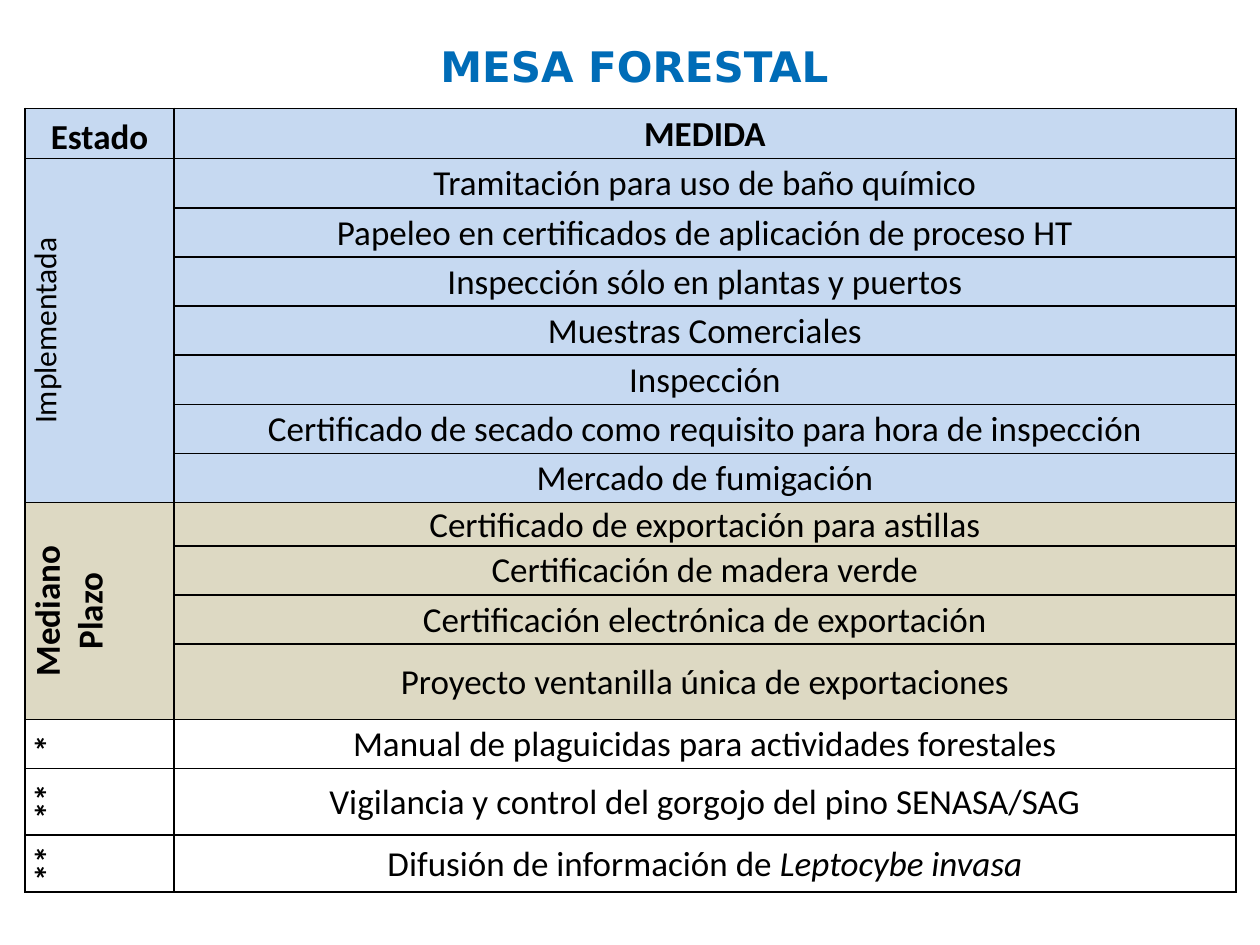
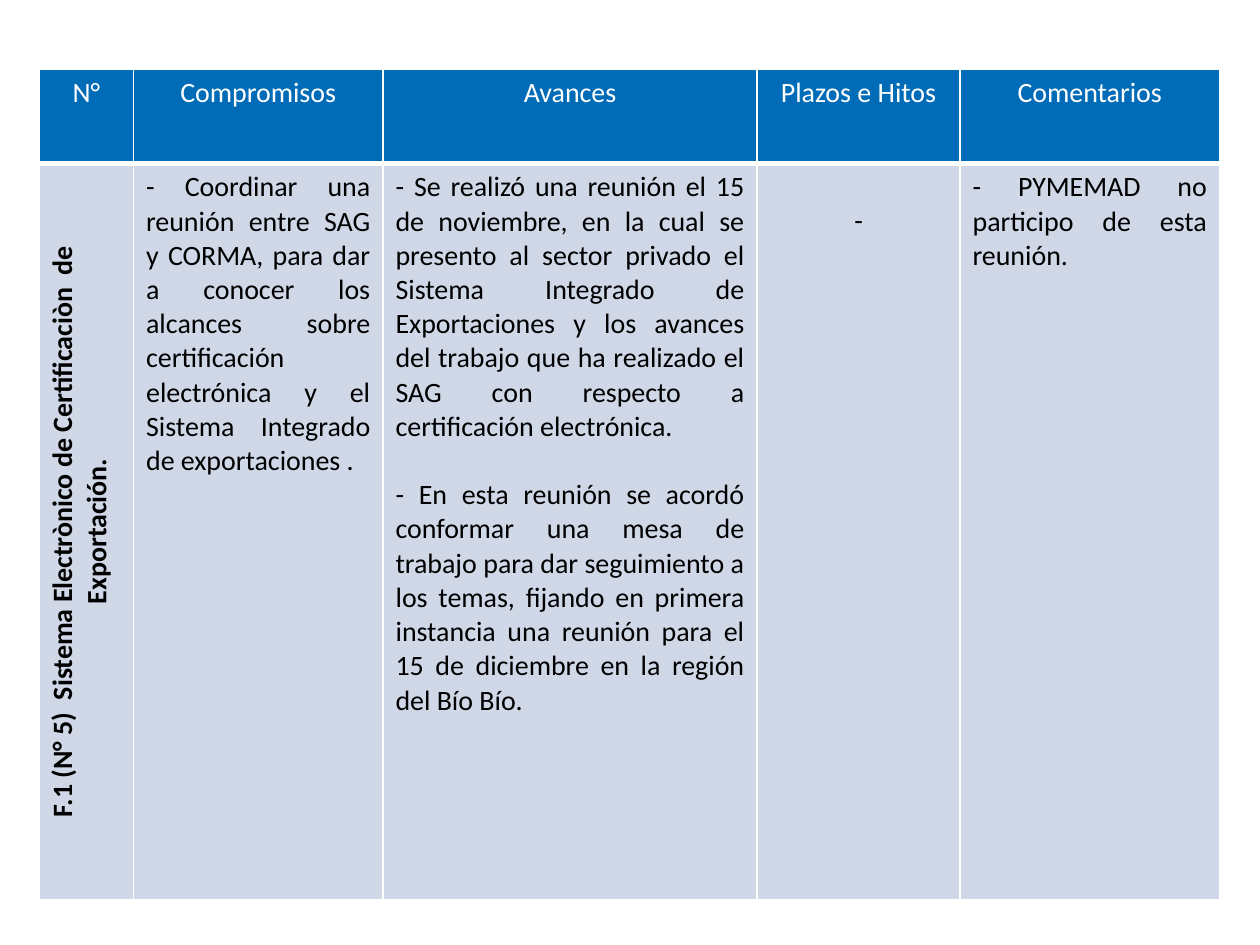
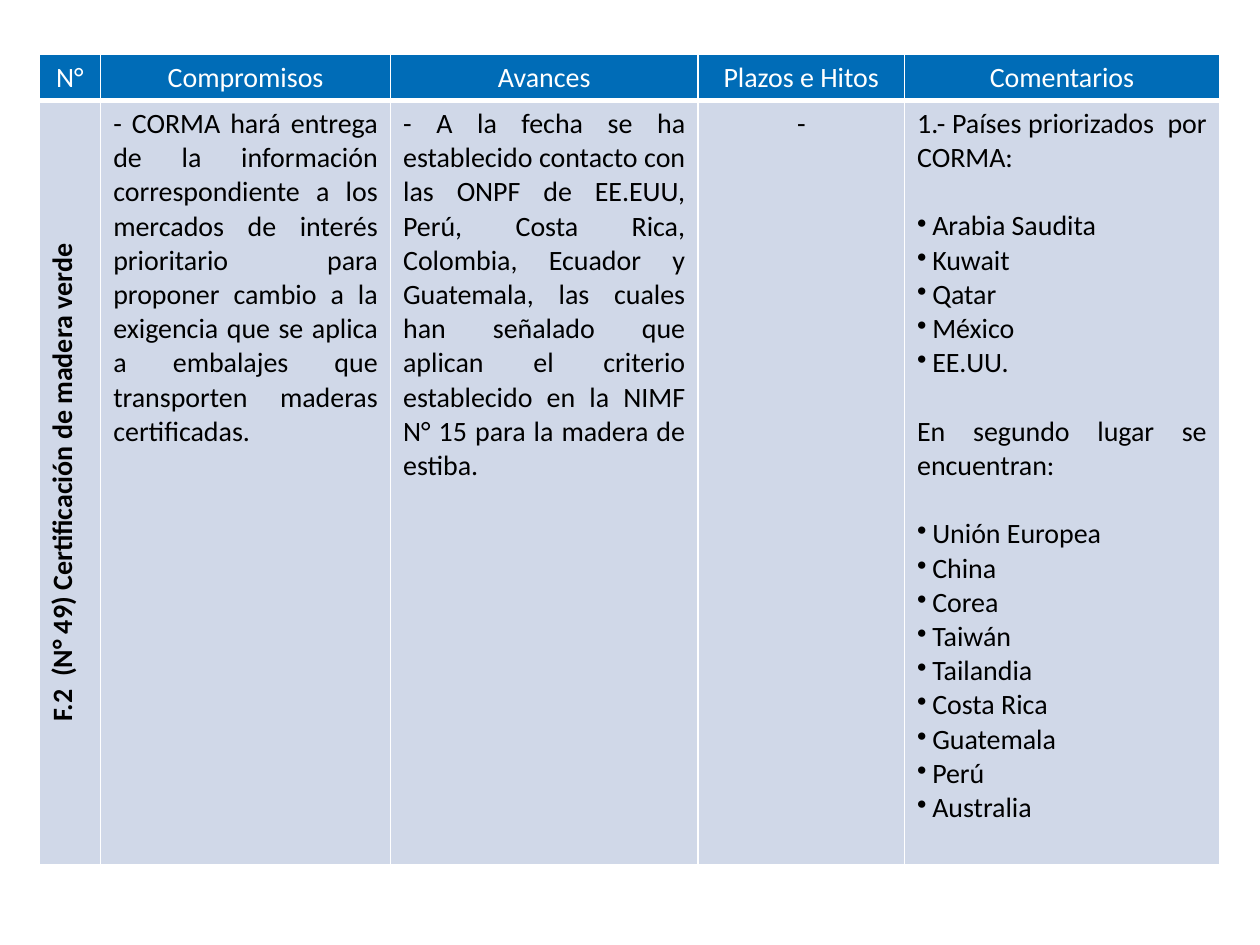
from lxml.etree import SubElement
from pptx import Presentation
from pptx.dml.color import RGBColor
from pptx.enum.text import MSO_ANCHOR, PP_ALIGN
from pptx.oxml.ns import qn
from pptx.util import Inches, Pt

BLUE, BLACK, WHITE = "006CB7", "000000", "FFFFFF"
DONE, MEDIUM, BODY = "C6D9F1", "DDD9C3", "D0D8E8"
LINE = 19.5  # one line of 16 pt text, in points
CENTER, LEFT, JUSTIFY = PP_ALIGN.CENTER, PP_ALIGN.LEFT, PP_ALIGN.JUSTIFY

# Status, bold status, fill, measures with their row heights
GROUPS = [
    ("Implementada", False, DONE, [
        ("Tramitación para uso de baño químico", 0.39),
        ("Papeleo en certificados de aplicación de proceso HT", 0.39),
        ("Inspección sólo en plantas y puertos", 0.39),
        ("Muestras Comerciales", 0.39),
        ("Inspección", 0.39),
        ("Certificado de secado como requisito para hora de inspección", 0.39),
        ("Mercado de fumigación", 0.39)]),
    ("Mediano Plazo", True, MEDIUM, [
        ("Certificado de exportación para astillas", 0.31),
        ("Certificación de madera verde", 0.39),
        ("Certificación electrónica de exportación", 0.39),
        ("Proyecto ventanilla única de exportaciones", 0.39)]),
    ("*", True, WHITE, [
        ("Manual de plaguicidas para actividades forestales", 0.39)]),
    ("**", True, WHITE, [
        ("Vigilancia y control del gorgojo del pino SENASA/SAG", 0.53)]),
    ("**", True, WHITE, [
        ("Difusión de información de |Leptocybe invasa", 0.45)]),
]

HEADERS = ["N°", "Compromisos", "Avances", "Plazos e Hitos", "Comentarios"]
# Each body cell is a list of paragraphs; a nested list is a bulleted list
COMMITMENTS = [
    {"top": 0.55, "cols": [0.75, 1.98, 2.97, 1.61, 2.06], "rows": [0.75, 4.84],
     "deadline_top": 0.32,
     "topic": "F.1 (N° 5)  Sistema Electrònico de Certificaciòn  de Exportación.",
     "commitment": ["- Coordinar una reunión entre SAG y CORMA, para dar a conocer los "
                    "alcances sobre certificación electrónica y el Sistema Integrado de "
                    "exportaciones ."],
     "progress": ["- Se realizó una reunión el 15 de noviembre, en la cual se presento al "
                  "sector privado el Sistema Integrado de Exportaciones y los avances del "
                  "trabajo que ha realizado el SAG con respecto a certificación electrónica.",
                  "- En esta reunión se acordó conformar una mesa de trabajo para dar "
                  "seguimiento a los temas, fijando en primera instancia una reunión para "
                  "el 15 de diciembre en la región del Bío Bío."],
     "comments": ["- PYMEMAD no participo de esta reunión."]},
    {"top": 0.43, "cols": [0.49, 2.3, 2.44, 1.64, 2.5], "rows": [0.34, 6.07],
     "deadline_top": 0.05,
     "topic": "F.2  (N° 49) Certificación de madera verde",
     "commitment": ["- CORMA hará entrega de la información correspondiente a los mercados "
                    "de interés prioritario para proponer cambio a la exigencia que se "
                    "aplica a embalajes que transporten maderas certificadas."],
     "progress": ["- A la fecha se ha establecido contacto con las ONPF de EE.EUU, Perú, "
                  "Costa Rica, Colombia, Ecuador y Guatemala, las cuales han señalado que "
                  "aplican el criterio establecido en la NIMF N° 15 para la madera de estiba."],
     "comments": ["1.- Países priorizados  por CORMA:",
                  ["Arabia Saudita", "Kuwait", "Qatar", "México", "EE.UU."],
                  "En segundo lugar se encuentran:",
                  ["Unión Europea", "China", "Corea", "Taiwán", "Tailandia", "Costa Rica",
                   "Guatemala", "Perú", "Australia"]]},
]


def rgb(color):
    return RGBColor.from_string(color)


def write(p, text, align=CENTER, **font):
    """Fill a paragraph; text after a bar is italic."""
    look = {"size": 16, "name": "Calibri", "bold": False, "color": BLACK, **font}
    p.alignment = align
    for i, part in enumerate(text.split("|")):
        r = p.add_run()
        r.text = part
        r.font.color.rgb = rgb(look["color"])
        values = {"size": Pt(look["size"]), "name": look["name"],
                  "bold": look["bold"], "italic": i == 1}
        for key, value in values.items():
            setattr(r.font, key, value)


def add_bullet(p):
    pPr = p._p.get_or_add_pPr()
    pPr.set("marL", str(Inches(0.12)))
    pPr.set("indent", str(-Inches(0.12)))
    SubElement(pPr, qn("a:buChar"), char="•")


def style_cell(cell, fill, border, bottom=1, margins=None, anchor=MSO_ANCHOR.TOP):
    tcPr = cell._tc.get_or_add_tcPr()
    for side, width in (("L", 1), ("R", 1), ("T", 1), ("B", bottom)):
        ln = SubElement(tcPr, qn(f"a:ln{side}"), w=str(Pt(width)))
        SubElement(SubElement(ln, qn("a:solidFill")), qn("a:srgbClr"), val=border)
    cell.fill.solid()
    cell.fill.fore_color.rgb = rgb(fill)
    cell.vertical_anchor = anchor
    for side, value in (margins or {}).items():
        setattr(cell, f"margin_{side}", Inches(value))


def turn(cell):
    cell._tc.get_or_add_tcPr().set("vert", "vert270")


def add_grid(s, left, top, cols, rows):
    frame = s.shapes.add_table(len(rows), len(cols), Inches(left), Inches(top),
                               Inches(sum(cols)), Inches(sum(rows)))
    table = frame.table
    table.first_row = table.horz_banding = False
    for column, width in zip(table.columns, cols):
        column.width = Inches(width)
    for row, height in zip(table.rows, rows):
        row.height = Inches(height)
    return table


def first(cell):
    return cell.text_frame.paragraphs[0]


def write_blocks(cell, blocks):
    """Write justified paragraphs and bulleted lists, one line apart."""
    p = None
    for block in blocks:
        bulleted = isinstance(block, list)
        for i, text in enumerate(block if bulleted else [block]):
            gap = p is not None and i == 0
            p = first(cell) if p is None else cell.text_frame.add_paragraph()
            if gap:
                p.space_before = Pt(LINE)
            write(p, text, LEFT if bulleted else JUSTIFY)
            if bulleted:
                add_bullet(p)


def measures_slide(s):
    tb = s.shapes.add_textbox(Inches(0.94), Inches(0.23), Inches(8.19), Inches(0.59))
    tf = tb.text_frame
    tf.word_wrap = True
    tf.vertical_anchor = MSO_ANCHOR.MIDDLE
    write(tf.paragraphs[0], "MESA FORESTAL", size=24, name="DejaVu Sans", bold=True, color=BLUE)

    heights = [0.4] + [h for *_, measures in GROUPS for _, h in measures]
    table = add_grid(s, 0.2, 0.86, [1.18, 8.43], heights)
    look = {"border": BLACK, "anchor": MSO_ANCHOR.MIDDLE,
            "margins": {"left": 0.01, "top": 0.01, "right": 0.01, "bottom": 0}}
    for col, text in enumerate(["Estado", "MEDIDA"]):
        cell = table.cell(0, col)
        style_cell(cell, DONE, **look)
        write(first(cell), text, size=20, bold=True)
    table.cell(0, 0).vertical_anchor = MSO_ANCHOR.BOTTOM

    row = 1
    for status, bold, fill, measures in GROUPS:
        start = table.cell(row, 0)
        for text, _ in measures:
            for col in range(2):
                style_cell(table.cell(row, col), fill, **look)
            write(first(table.cell(row, 1)), text, size=20)
            row += 1
        if len(measures) > 1:
            start.merge(table.cell(row - 1, 0))
        turn(start)
        write(first(start), status, size=20 if bold else 18, bold=bold)


def commitment_slide(s, item):
    table = add_grid(s, 0.31, item["top"], item["cols"], item["rows"])
    for col, text in enumerate(HEADERS):
        style_cell(table.cell(0, col), BLUE, WHITE, bottom=3)
        write(first(table.cell(0, col)), text, color=WHITE)
        style_cell(table.cell(1, col), BODY, WHITE)
    topic, commitment, progress, deadline, comments = table.rows[1].cells
    turn(topic)
    write(first(topic), item["topic"], bold=True)
    write_blocks(commitment, item["commitment"])
    write_blocks(progress, item["progress"])
    deadline.margin_top = Inches(item["deadline_top"])
    write(first(deadline), "-")
    write_blocks(comments, item["comments"])


def main():
    prs = Presentation()
    prs.slide_width, prs.slide_height = Inches(10), Inches(7.5)
    blank = prs.slide_layouts[6]
    measures_slide(prs.slides.add_slide(blank))
    for item in COMMITMENTS:
        commitment_slide(prs.slides.add_slide(blank), item)
    prs.save("out.pptx")


if __name__ == "__main__":
    main()
